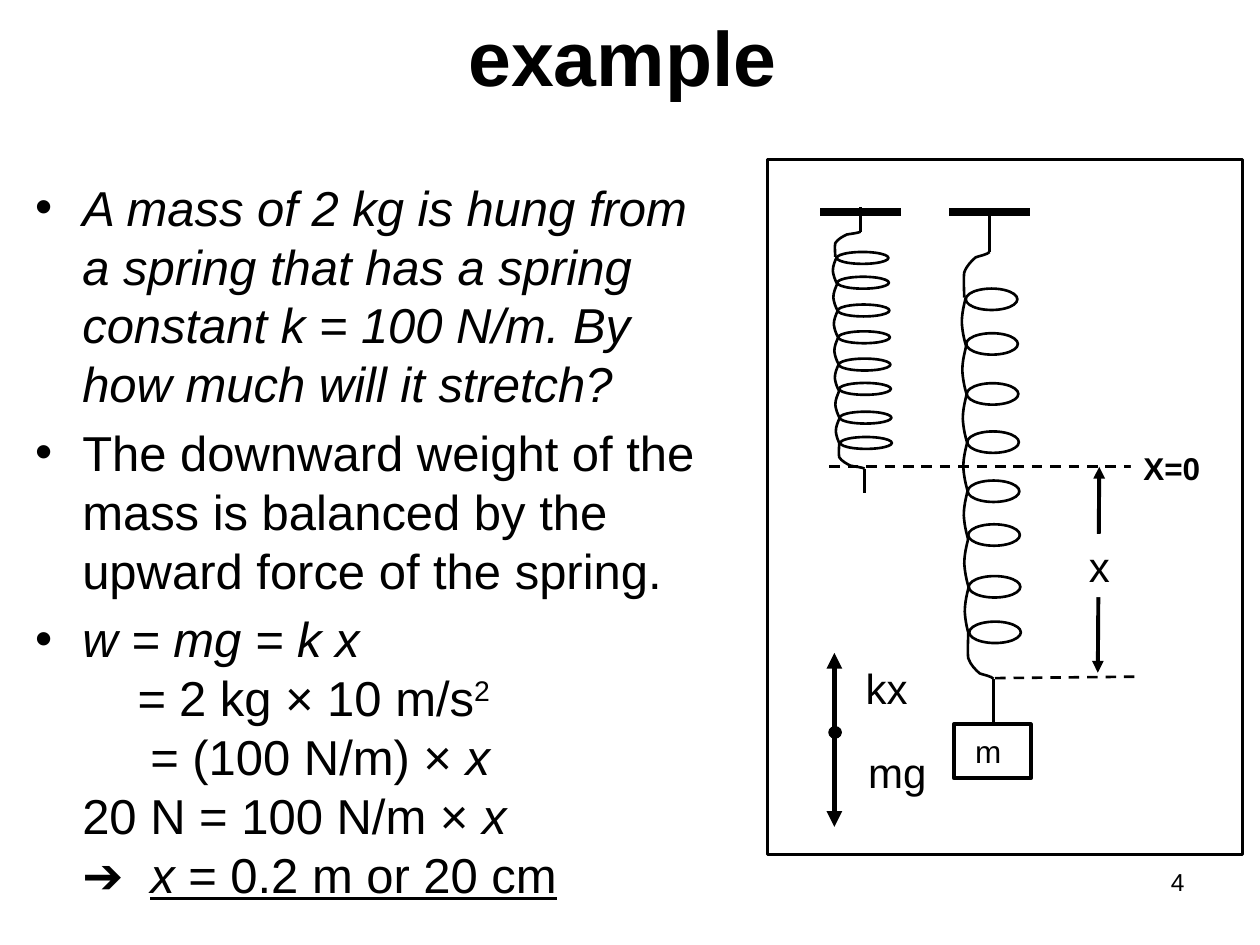
from dataclasses import dataclass

from lxml.etree import SubElement
from pptx import Presentation
from pptx.dml.color import RGBColor
from pptx.enum.dml import MSO_LINE
from pptx.enum.shapes import MSO_CONNECTOR, MSO_SHAPE
from pptx.enum.text import MSO_ANCHOR, PP_ALIGN
from pptx.oxml.ns import qn
from pptx.util import Cm, Pt


@dataclass(frozen=True)
class Theme:
    font: str = "Arial"
    ink: RGBColor = RGBColor(0, 0, 0)
    paper: RGBColor = RGBColor(255, 255, 255)
    title: int = 44
    body: int = 28
    label: int = 24
    small: int = 18
    number: int = 14
    thin: float = 1.5
    medium: float = 2.25
    thick: float = 3
    wall: float = 4.5


THEME = Theme()

# Each body line: left margin, first-line indent (cm), bullet, runs of (text, style);
# styles: i = italic, u = underline, s = superscript
BODY = [
    (0.95, -0.95, True, [("A mass of 2 kg is hung from a spring that has a spring constant "
                          "k = 100 N/m. By how much will it stretch?", "i")]),
    (0.95, -0.95, True, [("The downward weight of the mass is balanced by the upward force "
                          "of the spring.", "")]),
    (0.95, -0.95, True, [("w = mg = k x", "i")]),
    (2.05, 0, False, [("= ", "i"), ("2 kg × 10 m/s", ""), ("2", "s")]),
    (2.32, 0, False, [("= (100 N/m) × ", ""), ("x", "i")]),
    (0.95, 0, False, [("20 N = 100 N/m × ", ""), ("x", "i")]),
    (2.32, -1.37, False, [("➔\t", ""), ("x", "iu"), (" = 0.2 m or 20 cm", "u")]),
]

# Text, box (cm), type size, bold, white background
LABELS = [
    ("X=0", (22.8, 8.93, 1.65, 1.02), THEME.small, True, True),
    ("x", (21.7, 10.77, 0.94, 1.27), THEME.label, False, True),
    ("mg", (17.25, 14.92, 1.68, 1.27), THEME.label, False, False),
    ("kx", (17.2, 13.23, 1.35, 1.27), THEME.label, False, False),
]

# Start, end (cm), width, dashed, arrows at both ends
GUIDES = [
    ((16.72, 9.41), (23.22, 9.41), THEME.thin, True, False),
    ((22.16, 9.41), (22.13, 13.56), THEME.medium, False, True),
    ((20.06, 13.67), (22.99, 13.64), THEME.thin, True, False),
    ((16.82, 13.16), (16.82, 16.67), THEME.thick, False, True),
]

# Spring anchor (cm) and vertical stretch
SPRINGS = [((17.35, 4.67), 1), ((19.95, 5.08), 1.8)]
LOOP_TOPS = [0.41, 0.91, 1.47, 2.01, 2.56, 3.05, 3.63, 4.14]
LOOP_SIZE = (1.04, 0.24)
LOOP_LEFT, DRIFT = -0.48, 0.01
ARC_TOP, ARC_PITCH = 0.51, 0.54
COIL_END = (0.08, 4.78)
LEAD = 0.49
WALL_Y, WALL_HALF = 4.27, 0.81
# Bezier points: start, then three for each segment
ARC = [(0, 0), (-0.04, 0.09), (-0.08, 0.18), (-0.08, 0.28),
       (-0.07, 0.37), (-0.04, 0.46), (0.01, 0.55)]
HOOK = [(0, 0), (-0.05, 0.03), (-0.18, 0.04), (-0.28, 0.06), (-0.36, 0.1),
        (-0.46, 0.15), (-0.51, 0.23), (-0.53, 0.3), (-0.51, 0.46), (-0.51, 0.51)]


def add_run(paragraph, text, size, style="", bold=False):
    run = paragraph.add_run()
    run.text = text
    font = run.font
    font.name, font.size, font.bold = THEME.font, Pt(size), bold
    font.color.rgb = THEME.ink
    font.italic, font.underline = "i" in style, "u" in style
    if "s" in style:
        run._r.get_or_add_rPr().set("baseline", "30000")


def add_text(slide, box, text, size, bold=False, align=PP_ALIGN.LEFT, wrap=True):
    shape = slide.shapes.add_textbox(*map(Cm, box))
    shape.text_frame.word_wrap = wrap
    paragraph = shape.text_frame.paragraphs[0]
    paragraph.alignment = align
    add_run(paragraph, text, size, bold=bold)
    return shape


def set_outline(shape, width):
    shape.shadow.inherit = False
    shape.fill.background()
    shape.line.color.rgb = THEME.ink
    shape.line.width = Pt(width)


def add_outline(slide, kind, box, width):
    shape = slide.shapes.add_shape(kind, *map(Cm, box))
    set_outline(shape, width)
    return shape


def add_line(slide, start, end, width, dashed=False, arrows=False):
    line = slide.shapes.add_connector(MSO_CONNECTOR.STRAIGHT, *map(Cm, (*start, *end)))
    line.line.color.rgb = THEME.ink
    line.line.width = Pt(width)
    if dashed:
        line.line.dash_style = MSO_LINE.DASH
    if arrows:
        for tag in ("a:headEnd", "a:tailEnd"):
            SubElement(line.line._get_or_add_ln(), qn(tag), type="triangle")
    SubElement(line._element.spPr, qn("a:effectLst"))


def add_curve(slide, origin, controls, stretch):
    """Draw a chain of cubic Bezier segments as an open outline."""
    x, y = origin
    points = [(Cm(x + dx), Cm(y + dy * stretch)) for dx, dy in controls]
    builder = slide.shapes.build_freeform(*points[0])
    builder.add_line_segments(points[1:], close=False)
    shape = builder.convert_to_shape()
    straight = list(shape._element.iter(qn("a:lnTo")))
    outline = straight[0].getparent()
    for first in range(0, len(straight), 3):
        segment = SubElement(outline, qn("a:cubicBezTo"))
        for line_to in straight[first:first + 3]:
            segment.append(line_to[0])
            outline.remove(line_to)
    set_outline(shape, THEME.thin)


def add_spring(slide, anchor, stretch):
    x, y = anchor
    end_x, end_y = x + COIL_END[0], y + COIL_END[1] * stretch
    width, height = LOOP_SIZE
    for i, top in enumerate(LOOP_TOPS):
        left = x + LOOP_LEFT + i * DRIFT
        box = (left, y + top * stretch, width, height * stretch)
        add_outline(slide, MSO_SHAPE.OVAL, box, THEME.thin)
        if i < len(LOOP_TOPS) - 1:
            add_curve(slide, (left, y + (ARC_TOP + i * ARC_PITCH) * stretch), ARC, stretch)
    add_curve(slide, anchor, HOOK, stretch)
    add_curve(slide, (end_x, end_y), HOOK, -stretch)
    add_line(slide, anchor, (x, y - LEAD * stretch), THEME.thin)
    add_line(slide, (end_x, end_y), (end_x, end_y + LEAD * stretch), THEME.thin)
    add_line(slide, (x - WALL_HALF, WALL_Y), (x + WALL_HALF, WALL_Y), THEME.wall)


def add_body(slide):
    frame = slide.shapes.add_textbox(*map(Cm, (0.46, 3.45, 14.45, 15.24))).text_frame
    frame.word_wrap = True
    for i, (margin, indent, bullet, runs) in enumerate(BODY):
        paragraph = frame.paragraphs[0] if i == 0 else frame.add_paragraph()
        paragraph.space_before = Pt(THEME.body * 0.2 if bullet else 0)
        properties = paragraph._p.get_or_add_pPr()
        properties.set("marL", str(Cm(margin)))
        properties.set("indent", str(Cm(indent)))
        if bullet:
            SubElement(properties, qn("a:buFont"), typeface=THEME.font)
            SubElement(properties, qn("a:buChar"), char="•")
        for text, style in runs:
            add_run(paragraph, text, THEME.body, style)


def main():
    presentation = Presentation()
    presentation.slide_width, presentation.slide_height = Cm(25.4), Cm(19.05)
    slide = presentation.slides.add_slide(presentation.slide_layouts[6])

    title = add_text(slide, (1.12, 0, 22.86, 2.24), "example", THEME.title, True,
                     PP_ALIGN.CENTER)
    title.text_frame.vertical_anchor = MSO_ANCHOR.MIDDLE
    add_body(slide)

    for guide in GUIDES:
        add_line(slide, *guide)
    for text, box, size, bold, backed in LABELS:
        label = add_text(slide, box, text, size, bold, wrap=False)
        if backed:
            label.fill.solid()
            label.fill.fore_color.rgb = THEME.paper
    for anchor, stretch in SPRINGS:
        add_spring(slide, anchor, stretch)

    mass = add_outline(slide, MSO_SHAPE.RECTANGLE, (19.23, 14.6, 1.55, 1.09), THEME.medium)
    mass.text_frame.margin_left = Cm(0.43)
    mass.text_frame.vertical_anchor = MSO_ANCHOR.MIDDLE
    mass.text_frame.paragraphs[0].alignment = PP_ALIGN.LEFT
    add_run(mass.text_frame.paragraphs[0], "m", THEME.small)
    dot = add_outline(slide, MSO_SHAPE.OVAL, (16.71, 14.65, 0.25, 0.23), 0.75)
    dot.fill.solid()
    dot.fill.fore_color.rgb = THEME.ink

    add_outline(slide, MSO_SHAPE.RECTANGLE, (15.47, 3.21, 9.58, 14.02), THEME.thin)
    add_text(slide, (18.21, 17.35, 5.92, 1.32), "4", THEME.number, align=PP_ALIGN.RIGHT)
    presentation.save("out.pptx")


if __name__ == "__main__":
    main()
